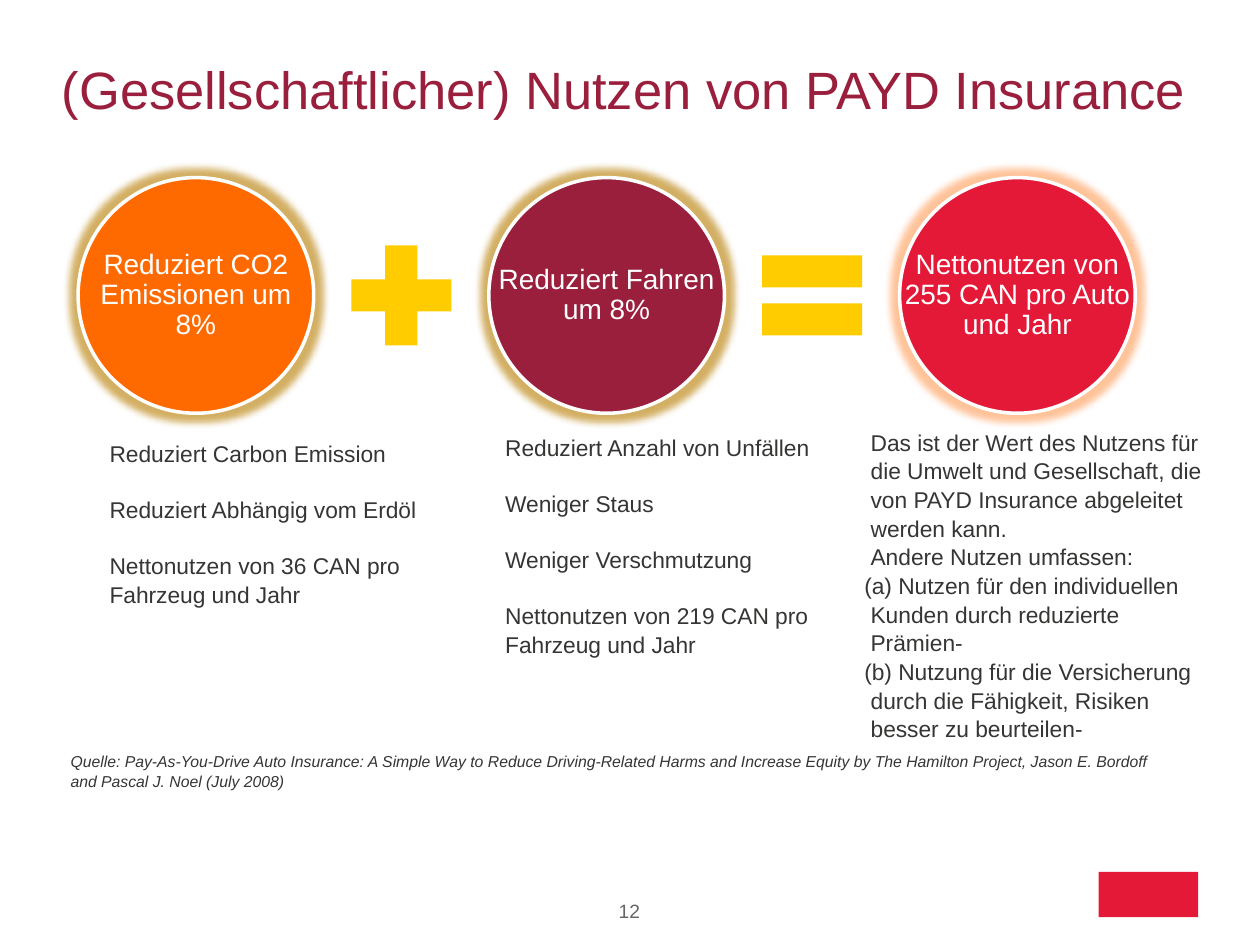
"""Build a slide on the social benefits of PAYD insurance."""
from lxml import etree
from pptx import Presentation
from pptx.dml.color import RGBColor
from pptx.enum.shapes import MSO_SHAPE
from pptx.enum.text import MSO_ANCHOR, PP_ALIGN
from pptx.oxml.ns import qn
from pptx.util import Inches, Pt

OVAL, PLUS, EQUAL = MSO_SHAPE.OVAL, MSO_SHAPE.MATH_PLUS, MSO_SHAPE.MATH_EQUAL
RECTANGLE = MSO_SHAPE.RECTANGLE
TOP, MIDDLE = MSO_ANCHOR.TOP, MSO_ANCHOR.MIDDLE
LEFT, CENTER = PP_ALIGN.LEFT, PP_ALIGN.CENTER

WHITE = RGBColor(0xFF, 0xFF, 0xFF)
ORANGE = RGBColor(0xFF, 0x6A, 0x00)
BURGUNDY = RGBColor(0x99, 0x1F, 0x3D)
RED = RGBColor(0xE3, 0x19, 0x37)
YELLOW = RGBColor(0xFF, 0xCC, 0x00)
OCHRE = RGBColor(0xC8, 0x9B, 0x3C)
DARK = RGBColor(0x36, 0x35, 0x34)
GRAY = RGBColor(0x66, 0x66, 0x66)

TITLE = "(Gesellschaftlicher) Nutzen von PAYD Insurance"
CIRCLES = [
    ("Reduziert CO2 Emissionen um 8%", ORANGE, OCHRE, 80),
    ("Reduziert Fahren um 8%", BURGUNDY, OCHRE, 80),
    ("Nettonutzen von 255 CAN pro Auto und Jahr", RED, ORANGE, 40),
]
OPERATORS = [PLUS, EQUAL]
COLUMNS = [
    ((0.62, 3.48, 2.7, 1.53), 15.7, 0, [
        "Reduziert Carbon Emission",
        "Reduziert Abhängig vom Erdöl",
        "Nettonutzen von 36 CAN pro Fahrzeug und Jahr",
    ]),
    ((3.76, 3.43, 2.7, 1.97), 15.7, 0, [
        "Reduziert Anzahl von Unfällen",
        "Weniger Staus",
        "Weniger Verschmutzung",
        "Nettonutzen von 219 CAN pro Fahrzeug und Jahr",
    ]),
    ((6.66, 3.39, 2.92, 2.84), 0, -0.05, [
        "Das ist der Wert des Nutzens für die Umwelt und Gesellschaft, "
        "die von PAYD Insurance abgeleitet werden kann.",
        "Andere Nutzen umfassen:",
        "(a) Nutzen für den individuellen Kunden durch reduzierte Prämien-",
        "(b) Nutzung für die Versicherung durch die Fähigkeit, Risiken "
        "besser zu beurteilen-",
    ]),
]
SOURCE = (
    "Quelle: Pay-As-You-Drive Auto Insurance: A Simple Way to Reduce "
    "Driving-Related Harms and Increase Equity by The Hamilton Project, "
    "Jason E. Bordoff and Pascal J. Noel (July 2008)"
)
PAGE_NUMBER = "12"

CIRCLE_LEFT, CIRCLE_TOP, CIRCLE_SIZE, CIRCLE_STEP = 0.62, 1.41, 1.87, 3.26
OPERATOR_SIZE = 1.08
GLOW_RADIUS = Pt(8)


def write_text(shape, texts, size, color, align=LEFT, anchor=TOP, inset=0,
               spacing=1.05, gap=0, margin=0, hanging=0, italic=False):
    frame = shape.text_frame
    frame.word_wrap = True
    frame.vertical_anchor = anchor
    frame.margin_left = frame.margin_right = Inches(inset)
    frame.margin_top = frame.margin_bottom = Inches(inset)
    for index, text in enumerate(texts):
        paragraph = frame.add_paragraph() if index else frame.paragraphs[0]
        paragraph.text = text
        paragraph.alignment = align
        paragraph.line_spacing = spacing
        paragraph.space_before = Pt(gap if index else 0)
        if margin:
            properties = paragraph._p.get_or_add_pPr()
            properties.set("marL", str(Inches(margin)))
            indent = hanging if text.startswith("(") else 0
            properties.set("indent", str(Inches(indent)))
        font = paragraph.font
        font.name, font.size, font.italic = "Arial", Pt(size), italic
        font.color.rgb = color


def add_text(slide, box, texts, **style):
    write_text(slide.shapes.add_textbox(*map(Inches, box)), texts, **style)


def add_filled(slide, kind, box, fill):
    shape = slide.shapes.add_shape(kind, *map(Inches, box))
    shape.shadow.inherit = False
    shape.fill.solid()
    shape.fill.fore_color.rgb = fill
    shape.line.fill.background()
    return shape


def add_glow(shape, color, opacity):
    effects = shape._element.spPr.find(qn("a:effectLst"))
    glow = etree.SubElement(effects, qn("a:glow"), rad=str(GLOW_RADIUS))
    tint = etree.SubElement(glow, qn("a:srgbClr"), val=str(color))
    etree.SubElement(tint, qn("a:alpha"), val=str(opacity * 1000))


def add_equation(slide):
    gap = (CIRCLE_STEP - CIRCLE_SIZE - OPERATOR_SIZE) / 2
    operator_top = CIRCLE_TOP + (CIRCLE_SIZE - OPERATOR_SIZE) / 2
    for index, (text, fill, glow, opacity) in enumerate(CIRCLES):
        left = CIRCLE_LEFT + index * CIRCLE_STEP
        box = (left, CIRCLE_TOP, CIRCLE_SIZE, CIRCLE_SIZE)
        circle = add_filled(slide, OVAL, box, fill)
        circle.line.color.rgb = WHITE
        circle.line.width = Pt(2)
        add_glow(circle, glow, opacity)
        add_text(slide, box, [text], size=16, color=WHITE, align=CENTER,
                 anchor=MIDDLE, inset=0.02, spacing=0.9)
        if index < len(OPERATORS):
            operator_left = left + CIRCLE_SIZE + gap
            add_filled(slide, OPERATORS[index],
                       (operator_left, operator_top, OPERATOR_SIZE, OPERATOR_SIZE), YELLOW)


def main():
    presentation = Presentation()
    presentation.slide_width, presentation.slide_height = Inches(10), Inches(7.5)
    slide = presentation.slides.add_slide(presentation.slide_layouts[5])

    title = slide.shapes.title
    title.left, title.top = Inches(0.49), Inches(0.2)
    title.width, title.height = Inches(9.01), Inches(1.01)
    write_text(title, [TITLE], size=30, color=BURGUNDY, anchor=MIDDLE, spacing=1)

    add_equation(slide)
    for box, gap, hanging, texts in COLUMNS:
        add_text(slide, box, texts, size=13, color=DARK, gap=gap,
                 margin=0.25, hanging=hanging)
    add_text(slide, (0.56, 5.96, 8.65, 0.3), [SOURCE], size=9, color=DARK, italic=True)
    add_text(slide, (4.57, 7.13, 0.85, 0.26), [PAGE_NUMBER], size=11,
             color=GRAY, align=CENTER)
    add_filled(slide, RECTANGLE, (8.72, 6.92, 0.79, 0.36), RED)
    presentation.save("out.pptx")


if __name__ == "__main__":
    main()
